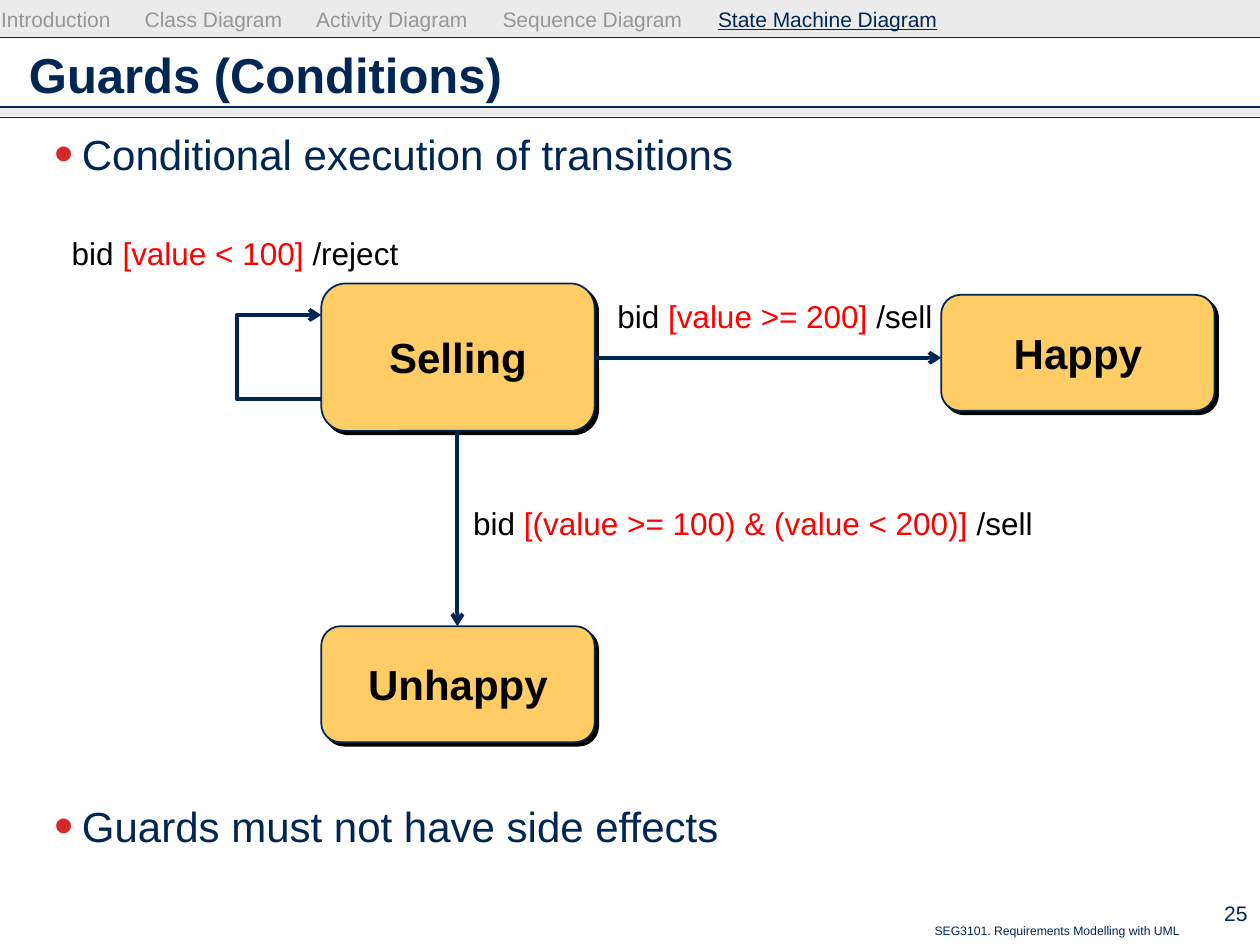
from dataclasses import dataclass

from lxml.etree import SubElement
from pptx import Presentation
from pptx.dml.color import RGBColor
from pptx.enum.shapes import MSO_CONNECTOR, MSO_SHAPE
from pptx.enum.text import MSO_ANCHOR, MSO_AUTO_SIZE, PP_ALIGN
from pptx.oxml.ns import qn
from pptx.util import Inches, Pt

NAVY, RED, BLACK = "002654", "FF0000", "000000"
GREY, BAND, AMBER, BULLET = "969696", "CDCDCD", "FFCC66", "D62828"


@dataclass
class State:
    name: str
    left: float
    top: float
    height: float
    width: float = 2.17


@dataclass
class Guard:
    condition: str
    action: str
    left: float
    top: float
    width: float


STATES = [
    State("Selling", 2.55, 2.25, 1.17),
    State("Unhappy", 2.55, 4.97, 0.92),
    State("Happy", 7.47, 2.34, 0.92),
]
GUARDS = [
    Guard("[(value >= 100) & (value < 200)]", "/sell", 3.62, 3.95, 4.71),
    Guard("[value >= 200]", "/sell", 4.8, 2.31, 2.7),
    Guard("[value < 100]", "/reject", 0.47, 1.81, 2.79),
]
SECTIONS = ["Introduction", "Class Diagram", "Activity Diagram", "Sequence Diagram"]
CURRENT_SECTION = "State Machine Diagram"
SECTION_TABS = [1.14, 2.5, 3.98, 5.69]


def rgb(value: str) -> RGBColor:
    return RGBColor.from_string(value)


def add_span(para, text: str, *, size: float, color: str = NAVY,
             bold: bool = False, underline: bool = False) -> None:
    span = para.add_run()
    span.text = text
    font = span.font
    font.name, font.size, font.bold = "Arial", Pt(size), bold
    font.underline = underline
    font.color.rgb = rgb(color)


def add_box(page, left: float, top: float, width: float, height: float, *,
            align=PP_ALIGN.LEFT, anchor=MSO_ANCHOR.TOP):
    """Add an empty wrapping text box and return its first paragraph."""
    box = page.shapes.add_textbox(Inches(left), Inches(top), Inches(width), Inches(height))
    frame = box.text_frame
    frame.word_wrap = True
    frame.vertical_anchor = anchor
    para = frame.paragraphs[0]
    para.alignment = align
    return para


def place(shape, left: float, top: float, width: float, height: float) -> None:
    shape.left, shape.top = Inches(left), Inches(top)
    shape.width, shape.height = Inches(width), Inches(height)


def add_band(page, top: float, height: float) -> None:
    band = page.shapes.add_shape(MSO_SHAPE.RECTANGLE, 0, Inches(top), Inches(10), Inches(height))
    band.shadow.inherit = False
    band.line.fill.background()
    band.fill.solid()
    band.fill.fore_color.rgb = rgb(BAND)
    color = band.fill._xPr.find(qn("a:solidFill"))[0]
    SubElement(color, qn("a:alpha"), val="40000")


def style_line(line, width: float, arrow: bool = False) -> None:
    line.color.rgb = rgb(NAVY)
    line.width = Pt(width)
    if arrow:
        SubElement(line._get_or_add_ln(), qn("a:tailEnd"), type="arrow")


def add_line(page, start: tuple[float, float], end: tuple[float, float],
             width: float, arrow: bool = False) -> None:
    points = [Inches(value) for value in (*start, *end)]
    connector = page.shapes.add_connector(MSO_CONNECTOR.STRAIGHT, *points)
    style_line(connector.line, width, arrow)
    SubElement(connector._element.spPr, qn("a:effectLst"))


def add_state(page, state: State) -> None:
    shape = page.shapes.add_shape(MSO_SHAPE.ROUNDED_RECTANGLE, 0, 0, 0, 0)
    place(shape, state.left, state.top, state.width, state.height)
    shape.fill.solid()
    shape.fill.fore_color.rgb = rgb(AMBER)
    style_line(shape.line, 1)
    shape.shadow.inherit = False
    effects = shape._element.spPr.find(qn("a:effectLst"))
    shadow = SubElement(effects, qn("a:outerShdw"), dist=str(Pt(2.8)), dir="2700000",
                        algn="ctr", rotWithShape="0")
    SubElement(shadow, qn("a:srgbClr"), val=BLACK)
    frame = shape.text_frame
    frame.vertical_anchor = MSO_ANCHOR.MIDDLE
    para = frame.paragraphs[0]
    para.alignment = PP_ALIGN.CENTER
    add_span(para, state.name, size=24, color=BLACK, bold=True)


def add_self_transition(page, right: float, top: float, size: float) -> None:
    left, bottom = right - size, top + size
    builder = page.shapes.build_freeform(Inches(right), Inches(bottom))
    corners = [(left, bottom), (left, top), (right, top)]
    builder.add_line_segments([(Inches(x), Inches(y)) for x, y in corners], close=False)
    loop = builder.convert_to_shape()
    loop.shadow.inherit = False
    loop.fill.background()
    style_line(loop.line, 2.25, arrow=True)


def add_guard(page, guard: Guard) -> None:
    para = add_box(page, guard.left, guard.top, guard.width, 0.4,
                   align=PP_ALIGN.CENTER, anchor=MSO_ANCHOR.MIDDLE)
    para._parent.word_wrap = False
    add_span(para, "bid ", size=18, color=BLACK)
    add_span(para, guard.condition, size=18, color=RED)
    add_span(para, f" {guard.action}", size=18, color=BLACK)


def add_bullet(para, text: str, space_before: float) -> None:
    properties = para._p.get_or_add_pPr()
    properties.set("marL", str(Inches(0.42)))
    properties.set("indent", str(Inches(-0.22)))
    SubElement(SubElement(properties, qn("a:buClr")), qn("a:srgbClr"), val=BULLET)
    SubElement(properties, qn("a:buSzPct"), val="130000")
    SubElement(properties, qn("a:buFont"), typeface="Arial")
    SubElement(properties, qn("a:buChar"), char="•")
    para.line_spacing = Pt(26)
    para.space_before = Pt(space_before)
    add_span(para, text, size=24)


def add_navigation(page) -> None:
    para = add_box(page, -0.09, 0.05, 7.99, 0.25)
    para._parent.margin_top = 0
    tabs = SubElement(para._p.get_or_add_pPr(), qn("a:tabLst"))
    for position in SECTION_TABS:
        SubElement(tabs, qn("a:tab"), pos=str(Inches(position)), algn="l")
    for section in SECTIONS:
        add_span(para, f"{section}\t", size=12, color=GREY)
    add_span(para, CURRENT_SECTION, size=12, underline=True)


def main() -> None:
    deck = Presentation()
    deck.slide_width, deck.slide_height = Inches(10), Inches(7.5)
    page = deck.slides.add_slide(deck.slide_layouts[1])

    add_band(page, 0, 0.3)
    add_band(page, 0.85, 0.07)
    for y in (0.3, 0.85, 0.93):
        add_line(page, (0, y), (10, y), 0.75)

    title, body = page.placeholders
    place(title, 0.13, 0.26, 9.74, 0.66)
    title.text_frame.auto_size = MSO_AUTO_SIZE.NONE
    title.text_frame.vertical_anchor = MSO_ANCHOR.MIDDLE
    heading = title.text_frame.paragraphs[0]
    heading.alignment = PP_ALIGN.LEFT
    add_span(heading, "Guards (Conditions)", size=28, bold=True)

    place(body, 0.13, 1.01, 9.74, 6.1)
    body.text_frame.auto_size = MSO_AUTO_SIZE.NONE
    add_bullet(body.text_frame.paragraphs[0], "Conditional execution of transitions", 0)
    add_bullet(body.text_frame.add_paragraph(), "Guards must not have side effects", 358)

    for state in STATES:
        add_state(page, state)
    add_line(page, (3.63, 3.42), (3.63, 4.97), 2.25, arrow=True)
    add_line(page, (4.72, 2.84), (7.47, 2.84), 2.25, arrow=True)
    add_self_transition(page, 2.55, 2.5, 0.67)
    for guard in GUARDS:
        add_guard(page, guard)

    add_navigation(page)
    footer = add_box(page, 3.25, 7.28, 6.21, 0.22, align=PP_ALIGN.RIGHT)
    add_span(footer, "SEG3101. Requirements Modelling with UML", size=7)
    number = add_box(page, 9.3, 7.08, 0.7, 0.34, align=PP_ALIGN.RIGHT, anchor=MSO_ANCHOR.MIDDLE)
    add_span(number, "25", size=12)

    deck.save("out.pptx")


if __name__ == "__main__":
    main()
